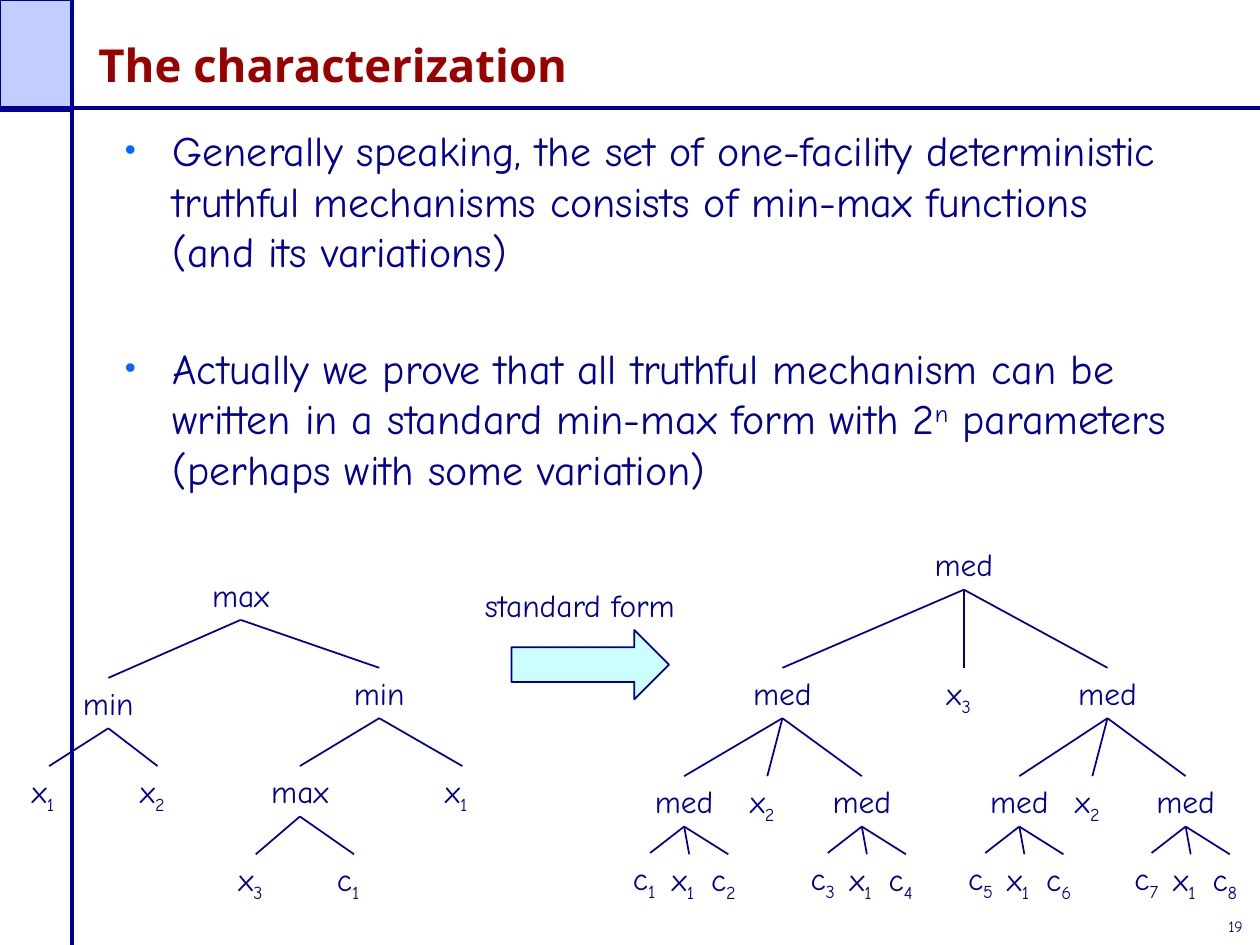
from dataclasses import dataclass

from lxml.etree import SubElement
from pptx import Presentation
from pptx.dml.color import RGBColor as RGB
from pptx.enum.shapes import MSO_CONNECTOR as CONN, MSO_SHAPE as SHAPE
from pptx.enum.text import MSO_ANCHOR as ANCHOR, MSO_AUTO_SIZE as FIT, PP_ALIGN as ALIGN
from pptx.oxml.ns import qn
from pptx.util import Inches, Pt


@dataclass
class Theme:
    ink: str = "000099"
    head: str = "990000"
    dot: str = "0066FF"
    block: str = "C1CEFF"
    arrow: str = "CCFFFF"
    font: str = "Comic Neue"
    title_font: str = "Noto Sans"
    title: int = 26
    body: int = 24
    label: int = 18
    small: int = 9
    thin: float = 1
    thick: float = 2.25


SUB, SUP = -25000, 30000
HIGH = 0.4  # height of a label box


class Deck:
    """Holds the theme and the current slide."""

    def __init__(self, theme):
        self.theme = theme
        self.prs = Presentation()
        self.prs.slide_width, self.prs.slide_height = Inches(10), Inches(7.5)
        self.slide = self.prs.slides.add_slide(self.prs.slide_layouts[1])
        self.shapes = self.slide.shapes

    def place(self, shape, *box):
        shape.left, shape.top, shape.width, shape.height = map(Inches, box)

    def run(self, para, text, size, base=0, color=None, font=None, bold=False):
        run = para.add_run()
        run.text = text
        run.font.size, run.font.bold = Pt(size), bold
        run.font.name = font or self.theme.font
        run.font.color.rgb = RGB.from_string(color or self.theme.ink)
        if base:
            run.font._element.set("baseline", str(base))

    def title(self, text, *box):
        shape = self.shapes.title
        self.place(shape, *box)
        frame = shape.text_frame
        frame.auto_size, frame.vertical_anchor = FIT.NONE, ANCHOR.BOTTOM
        para = frame.paragraphs[0]
        para.alignment = ALIGN.LEFT
        look = self.theme
        self.run(para, text, look.title, color=look.head,
                 font=look.title_font, bold=True)

    def bullet(self, para):
        props = para._p.get_or_add_pPr()
        props.set("marL", str(Inches(0.38)))
        props.set("indent", str(-Inches(0.38)))
        tint = SubElement(props, qn("a:buClr"))
        SubElement(tint, qn("a:srgbClr"), val=self.theme.dot)
        SubElement(props, qn("a:buSzPct"), val="75000")
        SubElement(props, qn("a:buFont"), typeface="Arial")
        SubElement(props, qn("a:buChar"), char="•")

    def body(self, items, gap, *box):
        shape = self.slide.placeholders[1]
        self.place(shape, *box)
        frame = shape.text_frame
        frame.auto_size, frame.vertical_anchor = FIT.NONE, ANCHOR.TOP
        for i, runs in enumerate(items):
            para = frame.add_paragraph() if i else frame.paragraphs[0]
            self.bullet(para)
            para.space_before = Pt(gap if i else 0)
            for text, base in runs:
                self.run(para, text, self.theme.body, base)

    def label(self, runs, left, top, width, height=HIGH, size=None,
              align=ALIGN.LEFT, wrap=True):
        box = self.shapes.add_textbox(*map(Inches, (left, top, width, height)))
        frame = box.text_frame
        frame.word_wrap, frame.auto_size = wrap, FIT.SHAPE_TO_FIT_TEXT
        para = frame.paragraphs[0]
        para.alignment = align
        for text, base in runs:
            self.run(para, text, size or self.theme.label, base)
        return box

    def line(self, x1, y1, x2, y2, width):
        line = self.shapes.add_connector(
            CONN.STRAIGHT, *map(Inches, (x1, y1, x2, y2)))
        line.line.color.rgb = RGB.from_string(self.theme.ink)
        line.line.width = Pt(width)
        SubElement(line._element.spPr, qn("a:effectLst"))
        return line

    def shape(self, kind, fill, *box):
        shape = self.shapes.add_shape(kind, *map(Inches, box))
        shape.shadow.inherit = False
        shape.fill.solid()
        shape.fill.fore_color.rgb = RGB.from_string(fill)
        shape.line.color.rgb = RGB.from_string(self.theme.ink)
        shape.line.width = Pt(self.theme.thin)

    def tree(self, node):
        """Draws a node (name, centre, top, *children) and joins its children."""
        name, mid, top, *kids = node
        if kids:
            wide = 0.7
            box = self.label([(name, 0)], mid - wide / 2, top, wide,
                             align=ALIGN.CENTER)
        else:
            wide = 0.47
            box = self.label([(name[0], 0), (name[1], SUB)],
                             mid - wide / 2, top, wide)
        for kid in kids:
            child = self.tree(kid)
            edge = self.line(kid[1], kid[2], mid, top + HIGH, self.theme.thin)
            edge.begin_connect(child, 0)
            edge.end_connect(box, 2)
        return box


def triple(mid, num):
    """Lowest median: x1 between two numbered constants."""
    return ("med", mid, 6.16, (f"c{num}", mid - 0.27, 6.77),
            ("x1", mid + 0.04, 6.78), (f"c{num + 1}", mid + 0.35, 6.78))


def branch(mid, left, var, right, num):
    """Middle median: x2 between two triples."""
    return ("med", mid, 5.3, triple(left, num), ("x2", var, 6.16),
            triple(right, num + 2))


def main():
    look = Theme()
    deck = Deck(look)

    # Frame and page number
    deck.shape(SHAPE.RECTANGLE, look.block, 0, 0, 0.57, 0.88)
    deck.line(0, 0.86, 10, 0.86, look.thick)
    deck.line(0.57, 0, 0.57, 7.5, look.thick)
    deck.label([("19", 0)], 9.65, 7.23, 0.34, 0.25, look.small, wrap=False)

    # Title and bullets
    deck.title("The characterization", 0.68, 0.12, 8.7, 0.66)
    deck.body([
        [("Generally speaking, the set of one-facility deterministic truthful "
          "mechanisms consists of min-max functions (and its variations)", 0)],
        [("Actually we prove that all truthful mechanism can be written in a "
          "standard min-max form with 2", 0), ("n", SUP),
         (" parameters (perhaps with some variation)", 0)],
    ], 38, 0.89, 0.94, 8.5, 4.5)

    # Min-max tree
    inner = ("max", 2.38, 6.08, ("x3", 2.03, 6.78), ("c1", 2.81, 6.78))
    deck.tree(("max", 1.91, 4.52,
               ("min", 0.86, 5.38, ("x1", 0.39, 6.08), ("x2", 1.25, 6.08)),
               ("min", 3.01, 5.3, inner, ("x1", 3.67, 6.08))))

    # Median tree
    deck.tree(("med", 7.65, 4.28,
               branch(6.21, 5.43, 6.09, 6.84, 1),
               ("x3", 7.65, 5.3),
               branch(8.79, 8.09, 8.67, 9.41, 5)))

    # Arrow between the trees
    deck.shape(SHAPE.RIGHT_ARROW, look.arrow, 4.06, 5, 1.25, 0.55)
    deck.label([("standard form", 0)], 3.75, 4.6, 2.03)

    deck.prs.save("out.pptx")


if __name__ == "__main__":
    main()
